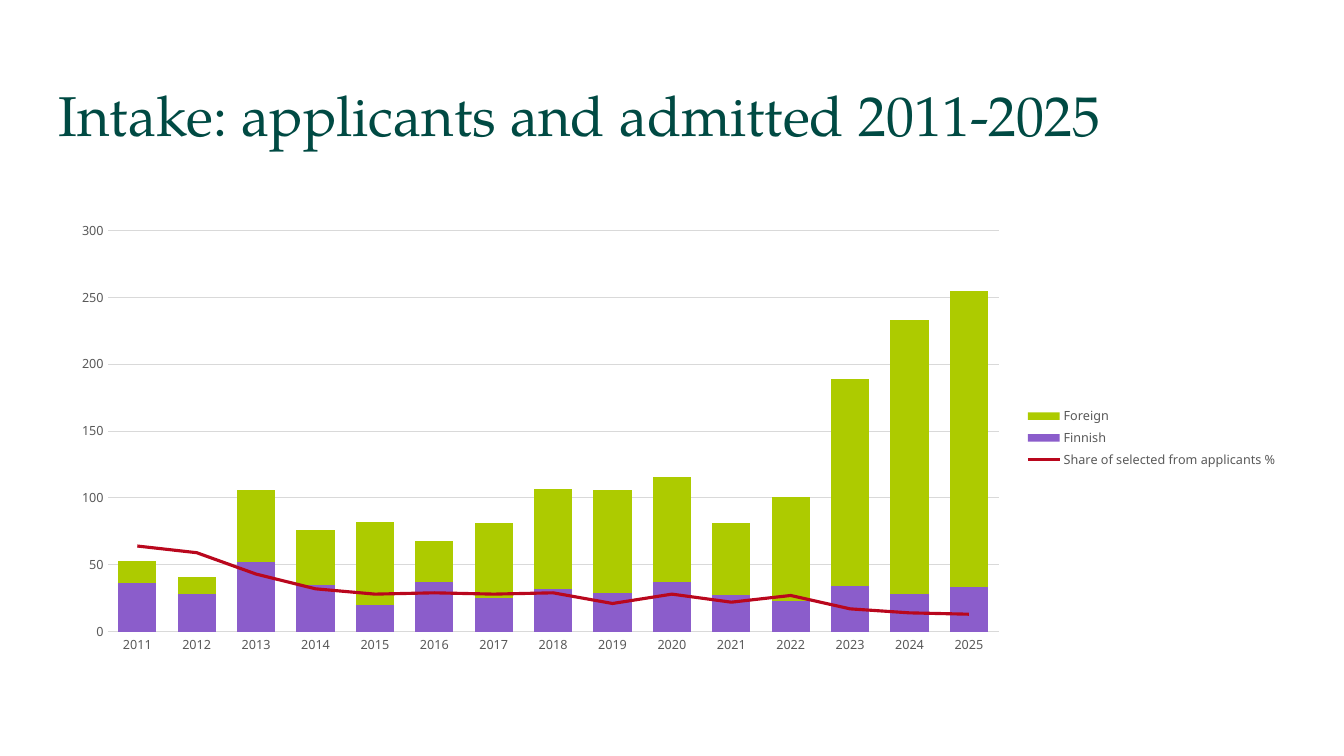
from copy import deepcopy

from pptx import Presentation
from pptx.chart.data import CategoryChartData
from pptx.dml.color import RGBColor
from pptx.enum.chart import XL_CHART_TYPE, XL_LEGEND_POSITION, XL_MARKER_STYLE, XL_TICK_MARK
from pptx.enum.text import MSO_ANCHOR
from pptx.oxml import parse_xml
from pptx.oxml.ns import nsdecls, qn
from pptx.util import Inches, Pt

TITLE = "Intake: applicants and admitted 2011-2025"
YEARS = [str(year) for year in range(2011, 2026)]
FINNISH = [36, 28, 52, 35, 20, 37, 25, 32, 29, 37, 27, 23, 34, 28, 33]
FOREIGN = [17, 13, 54, 41, 62, 31, 56, 75, 77, 79, 54, 78, 155, 205, 222]
SHARE = [64, 59, 43, 32, 28, 29, 28, 29, 21, 28, 22, 27, 17, 14, 13]

GREEN = RGBColor(0x00, 0x4A, 0x43)
PURPLE = RGBColor(0x8B, 0x5D, 0xCB)
LIME = RGBColor(0xAD, 0xCB, 0x00)
RED = RGBColor(0xB9, 0x07, 0x1D)
GREY = RGBColor(0x59, 0x59, 0x59)
LIGHT_GREY = RGBColor(0xD9, 0xD9, 0xD9)

BARS = [("Finnish", FINNISH, PURPLE), ("Foreign", FOREIGN, LIME)]
LINE_NAME = "Share of selected from applicants %"

SLIDE_WIDTH, SLIDE_HEIGHT = Inches(13.33), Inches(7.5)
MARGIN = Inches(0.58)
CONTENT_WIDTH = Inches(12.19)
TITLE_TOP, TITLE_HEIGHT = Inches(0.48), Inches(1.38)
CHART_TOP, CHART_HEIGHT = Inches(2.11), Inches(4.47)
PLOT_SHARES = {"x": 0.04, "y": 0.04, "w": 0.725, "h": 0.89}


def style_font(font, size, color, name="Noto Sans"):
    font.size = Pt(size)
    font.color.rgb = color
    font.name = name


def style_line(line, color, width):
    line.color.rgb = color
    line.width = Pt(width)


def add_text(slide, text, left, top, width, height, **font_format):
    shape = slide.shapes.add_textbox(left, top, width, height)
    frame = shape.text_frame
    frame.word_wrap = True
    frame.vertical_anchor = MSO_ANCHOR.MIDDLE
    frame.margin_left = frame.margin_right = frame.margin_top = frame.margin_bottom = 0
    paragraph = frame.paragraphs[0]
    paragraph.line_spacing = 0.9
    run = paragraph.add_run()
    run.text = text
    style_font(run.font, **font_format)


def move_last_series_to_line(chart):
    bar_chart = chart.plots[0]._element
    series = bar_chart.findall(qn("c:ser"))[-1]
    for invert in series.findall(qn("c:invertIfNegative")):
        series.remove(invert)
    line_chart = parse_xml(
        f'<c:lineChart {nsdecls("c")}><c:grouping val="standard"/>'
        '<c:varyColors val="0"/></c:lineChart>'
    )
    line_chart.append(series)
    line_chart.append(parse_xml(f'<c:marker {nsdecls("c")} val="1"/>'))
    for axis_id in bar_chart.findall(qn("c:axId")):
        line_chart.append(deepcopy(axis_id))
    bar_chart.addnext(line_chart)


def place_plot(chart):
    plot_area = chart._chartSpace.chart.plotArea
    for layout in plot_area.findall(qn("c:layout")):
        plot_area.remove(layout)
    shares = "".join(f'<c:{key} val="{value}"/>' for key, value in PLOT_SHARES.items())
    plot_area.insert(0, parse_xml(
        f'<c:layout {nsdecls("c")}><c:manualLayout><c:layoutTarget val="inner"/>'
        f'<c:xMode val="edge"/><c:yMode val="edge"/>{shares}</c:manualLayout></c:layout>'
    ))


def add_intake_chart(slide):
    data = CategoryChartData()
    data.categories = YEARS
    for name, values, _ in BARS:
        data.add_series(name, values)
    data.add_series(LINE_NAME, SHARE)
    chart = slide.shapes.add_chart(
        XL_CHART_TYPE.COLUMN_STACKED, MARGIN, CHART_TOP, CONTENT_WIDTH, CHART_HEIGHT, data
    ).chart
    move_last_series_to_line(chart)
    place_plot(chart)
    chart.has_title = False
    style_font(chart.font, 9, GREY)

    bar_plot, line_plot = chart.plots
    bar_plot.gap_width = 55
    bar_plot.overlap = 100
    bar_plot.vary_by_categories = False
    for series, (_, _, color) in zip(bar_plot.series, BARS):
        series.format.fill.solid()
        series.format.fill.fore_color.rgb = color
    share = line_plot.series[0]
    style_line(share.format.line, RED, 2.25)
    share.marker.style = XL_MARKER_STYLE.NONE
    share.smooth = False

    for axis in (chart.category_axis, chart.value_axis):
        axis.major_tick_mark = axis.minor_tick_mark = XL_TICK_MARK.NONE
        style_font(axis.tick_labels.font, 9, GREY)
    style_line(chart.category_axis.format.line, LIGHT_GREY, 0.75)
    value_axis = chart.value_axis
    value_axis.minimum_scale, value_axis.maximum_scale, value_axis.major_unit = 0, 300, 50
    value_axis.format.line.fill.background()
    style_line(value_axis.major_gridlines.format.line, LIGHT_GREY, 0.75)

    chart.has_legend = True
    chart.legend.position = XL_LEGEND_POSITION.RIGHT
    chart.legend.include_in_layout = False
    style_font(chart.legend.font, 9, GREY)


def main():
    presentation = Presentation()
    presentation.slide_width, presentation.slide_height = SLIDE_WIDTH, SLIDE_HEIGHT
    slide = presentation.slides.add_slide(presentation.slide_layouts[6])
    add_text(slide, TITLE, MARGIN, TITLE_TOP, CONTENT_WIDTH, TITLE_HEIGHT,
             size=40, color=GREEN, name="TeX Gyre Pagella")
    add_intake_chart(slide)
    presentation.save("out.pptx")


if __name__ == "__main__":
    main()
